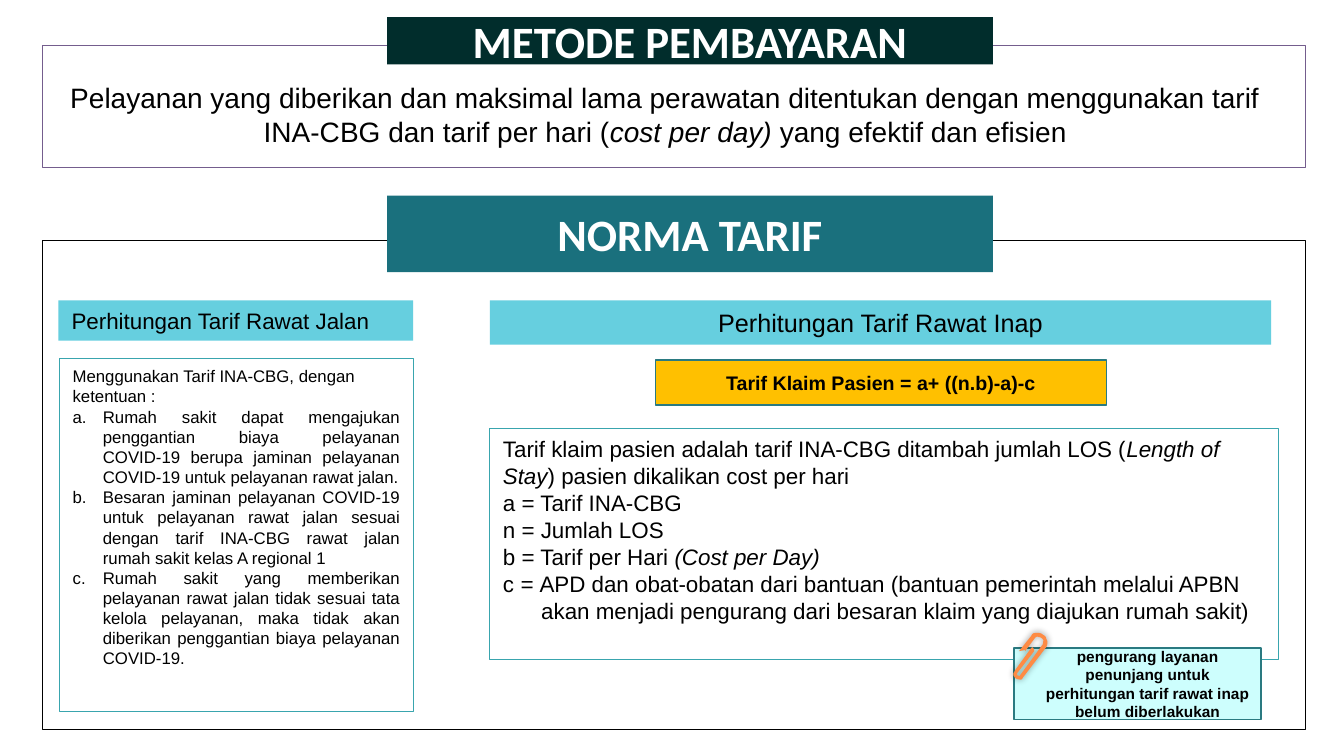
from dataclasses import dataclass

from lxml import etree
from pptx import Presentation
from pptx.dml.color import RGBColor
from pptx.enum.shapes import MSO_SHAPE
from pptx.enum.text import MSO_ANCHOR, PP_ALIGN
from pptx.oxml.ns import qn
from pptx.util import Emu, Inches, Pt

RECTANGLE, PROCESS = MSO_SHAPE.RECTANGLE, MSO_SHAPE.FLOWCHART_PROCESS
TOP, MIDDLE = MSO_ANCHOR.TOP, MSO_ANCHOR.MIDDLE
LEFT, CENTER, JUSTIFY = PP_ALIGN.LEFT, PP_ALIGN.CENTER, PP_ALIGN.JUSTIFY
WIDTH, HEIGHT = Inches(13.333), Inches(7.5)
CLIP_CELL = Inches(0.01)
CURVE_STEPS = 6


@dataclass(frozen=True)
class Theme:
    body_font: str = "Arial"
    title_font: str = "Calibri"
    black: str = "000000"
    white: str = "FFFFFF"
    purple: str = "745D8D"
    dark: str = "012D2C"
    teal: str = "1A707D"
    aqua: str = "66CFDF"
    edge: str = "39A5AE"
    strong_edge: str = "2A7A81"
    amber: str = "FFC000"
    mint: str = "CDFEFD"
    orange: str = "FE8B44"
    title: int = 32
    lead: int = 20
    heading: int = 18
    text: int = 16
    formula: int = 14
    detail: int = 12
    note: int = 11


THEME = Theme()


@dataclass(frozen=True)
class Run:
    text: str
    italic: bool = False


@dataclass(frozen=True)
class Line:
    runs: tuple[Run, ...]
    align: PP_ALIGN = LEFT
    margin: float = 0
    hanging: bool = False
    lettered: bool = False


@dataclass(frozen=True)
class Box:
    """Position and size are percentages of the slide's width and height."""

    left: float
    top: float
    width: float
    height: float
    lines: tuple[Line, ...] = ()
    size: int = THEME.text
    fill: str = ""
    edge: str = ""
    edge_width: float = 0.75
    kind: MSO_SHAPE = RECTANGLE
    anchor: MSO_ANCHOR = MIDDLE
    font: str = THEME.body_font
    color: str = THEME.black
    bold: bool = False
    inset: tuple[float, float] = (0.13, 0.07)


def plain(text: str, align: PP_ALIGN = LEFT, margin: float = 0) -> Line:
    return Line((Run(text),), align, margin)


def lettered(text: str) -> Line:
    return Line((Run(text),), JUSTIFY, 0.3, hanging=True, lettered=True)


def frame(top: float, height: float, edge: str) -> Box:
    return Box(3.15, top, 93.98, height, edge=edge, kind=PROCESS)


def banner(top: float, height: float, text: str, fill: str) -> Box:
    return Box(28.8, top, 45.08, height, (plain(text, CENTER),), THEME.title, fill,
               font=THEME.title_font, color=THEME.white, bold=True)


LEAD = Line((
    Run("Pelayanan yang diberikan dan maksimal lama perawatan ditentukan dengan menggunakan tarif INA-CBG dan tarif per hari ("),
    Run("cost per day) ", True), Run("yang efektif dan efisien")), CENTER)
OUTPATIENT = (
    plain("Menggunakan Tarif INA-CBG, dengan ketentuan :"),
    lettered("Rumah sakit dapat mengajukan penggantian biaya pelayanan COVID-19 berupa jaminan pelayanan COVID-19 untuk pelayanan rawat jalan."),
    lettered("Besaran jaminan pelayanan COVID-19 untuk pelayanan rawat jalan sesuai dengan tarif INA-CBG rawat jalan rumah sakit kelas A regional 1"),
    lettered("Rumah sakit yang memberikan pelayanan rawat jalan tidak sesuai tata kelola pelayanan, maka tidak akan diberikan penggantian biaya pelayanan COVID-19."),
)
INPATIENT = (
    Line((Run("Tarif klaim pasien adalah tarif INA-CBG ditambah jumlah LOS ("),
          Run("Length of Stay", True), Run(") pasien dikalikan cost per hari"))),
    plain("a = Tarif INA-CBG"),
    plain("n = Jumlah LOS"),
    Line((Run("b = Tarif per Hari "), Run("(Cost per Day)", True))),
    Line((Run("c "), Run("= ", True),
          Run("APD dan obat-obatan dari bantuan (bantuan pemerintah melalui APBN akan menjadi pengurang dari besaran klaim yang diajukan rumah sakit)")),
         margin=0.38, hanging=True),
)
NOTE = plain("pengurang layanan penunjang untuk perhitungan tarif rawat inap belum diberlakukan", CENTER, 0.2)

BOXES = (
    frame(6, 16.13, THEME.purple),
    banner(2.27, 6.27, "METODE PEMBAYARAN", THEME.dark),
    Box(3.9, 10, 91.2, 10.27, (LEAD,), THEME.lead, anchor=TOP, inset=(0.1, 0.05)),
    frame(31.87, 64.67, THEME.black),
    banner(25.87, 10.13, "NORMA TARIF", THEME.teal),
    Box(4.43, 47.47, 26.33, 46.67, OUTPATIENT, THEME.detail, edge=THEME.edge, anchor=TOP),
    Box(4.35, 39.73, 26.4, 5.33, (plain("Perhitungan Tarif Rawat Jalan"),), fill=THEME.aqua),
    Box(36.45, 39.73, 58.13, 5.87, (plain("Perhitungan Tarif Rawat Inap", CENTER),), THEME.heading, THEME.aqua),
    Box(48.75, 47.6, 33.6, 6, (plain("Tarif Klaim Pasien = a+ ((n.b)-a)-c", CENTER),), THEME.formula,
        THEME.amber, THEME.strong_edge, 1, bold=True, inset=(0.1, 0.05)),
    Box(36.45, 56.67, 58.65, 30.53, INPATIENT, edge=THEME.edge, anchor=TOP),
    Box(75.45, 85.73, 18.38, 9.47, (NOTE,), THEME.note, THEME.mint, THEME.strong_edge, 1,
        bold=True, inset=(0.1, 0.05)),
)

CLIP_ORIGIN = (75.38, 83.73)
CLIP_START = (22, 0)
CLIP_SEGMENTS = (
    ((23, 0), (25, 0), (26, 0)), ((27, 0), (29, 1), (30, 2)), ((32, 3), (33, 4), (33, 6)),
    ((35, 8), (34, 12), (33, 14)), ((10, 44),), ((9, 46), (8, 47), (6, 46)),
    ((4, 46), (2, 45), (1, 43)), ((0, 42), (0, 40), (1, 39)), ((2, 37),), ((18, 15),),
    ((18, 15), (18, 15), (19, 14)), ((19, 14), (20, 15), (20, 15)), ((21, 16), (21, 17), (21, 18)),
    ((4, 40),), ((4, 40), (4, 41), (4, 42)), ((5, 42), (5, 42), (6, 43)), ((6, 43), (7, 42), (7, 42)),
    ((29, 12),), ((30, 11), (30, 9), (30, 7)), ((29, 5), (27, 4), (25, 4)), ((24, 3), (22, 4), (21, 6)),
    ((12, 18),), ((12, 17),), ((6, 18),), ((18, 3),), ((19, 1), (20, 0), (22, 0)),
)


def across(share: float) -> Emu:
    return Emu(round(WIDTH * share / 100))


def down(share: float) -> Emu:
    return Emu(round(HEIGHT * share / 100))


def apply(target, values: dict) -> None:
    for name, value in values.items():
        setattr(target, name, value)


def paint(fill, color: str) -> None:
    if color:
        fill.solid()
        fill.fore_color.rgb = RGBColor.from_string(color)
    else:
        fill.background()


def write_line(paragraph, line: Line, box: Box) -> None:
    paragraph.alignment = line.align
    properties = paragraph._p.get_or_add_pPr()
    if line.margin:
        properties.set("marL", str(Inches(line.margin)))
        properties.set("indent", str(-Inches(line.margin) if line.hanging else 0))
    if line.lettered:
        etree.SubElement(properties, qn("a:buFont"), typeface="+mj-lt")
        etree.SubElement(properties, qn("a:buAutoNum"), type="alphaLcPeriod")
    for part in line.runs:
        run = paragraph.add_run()
        run.text = part.text
        apply(run.font, {"name": box.font, "size": Pt(box.size), "bold": box.bold, "italic": part.italic})
        run.font.color.rgb = RGBColor.from_string(box.color)


def draw_box(slide, box: Box) -> None:
    shape = slide.shapes.add_shape(box.kind, across(box.left), down(box.top), across(box.width), down(box.height))
    shape.shadow.inherit = False
    paint(shape.fill, box.fill)
    paint(shape.line.fill, box.edge)
    if box.edge:
        shape.line.width = Pt(box.edge_width)
    side, end = map(Inches, box.inset)
    frame_text = shape.text_frame
    apply(frame_text, {"word_wrap": True, "vertical_anchor": box.anchor, "margin_left": side,
                       "margin_right": side, "margin_top": end, "margin_bottom": end})
    for index, line in enumerate(box.lines):
        paragraph = frame_text.add_paragraph() if index else frame_text.paragraphs[0]
        write_line(paragraph, line, box)


def clip_outline() -> list[tuple[float, float]]:
    points = [CLIP_START]
    for segment in CLIP_SEGMENTS:
        if len(segment) == 1:
            points.append(segment[0])
            continue
        corners = (points[-1], *segment)
        for step in range(1, CURVE_STEPS + 1):
            t = step / CURVE_STEPS
            weights = ((1 - t) ** 3, 3 * t * (1 - t) ** 2, 3 * t * t * (1 - t), t ** 3)
            points.append(tuple(sum(w * c[axis] for w, c in zip(weights, corners)) for axis in (0, 1)))
    return [(x * CLIP_CELL, y * CLIP_CELL) for x, y in points]


def draw_clip(slide) -> None:
    start, *others = clip_outline()
    builder = slide.shapes.build_freeform(*start)
    builder.add_line_segments(others, close=True)
    shape = builder.convert_to_shape(across(CLIP_ORIGIN[0]), down(CLIP_ORIGIN[1]))
    shape.shadow.inherit = False
    paint(shape.fill, THEME.orange)
    paint(shape.line.fill, "")
    effects = shape._element.spPr.find(qn("a:effectLst"))
    shadow = etree.SubElement(effects, qn("a:outerShdw"), blurRad=str(Pt(5)), dist="0", dir="0")
    color = etree.SubElement(shadow, qn("a:srgbClr"), val=THEME.black)
    etree.SubElement(color, qn("a:alpha"), val="40000")


def main() -> None:
    presentation = Presentation()
    apply(presentation, {"slide_width": WIDTH, "slide_height": HEIGHT})
    slide = presentation.slides.add_slide(presentation.slide_layouts[6])
    for box in BOXES:
        draw_box(slide, box)
    draw_clip(slide)
    presentation.save("out.pptx")


if __name__ == "__main__":
    main()
